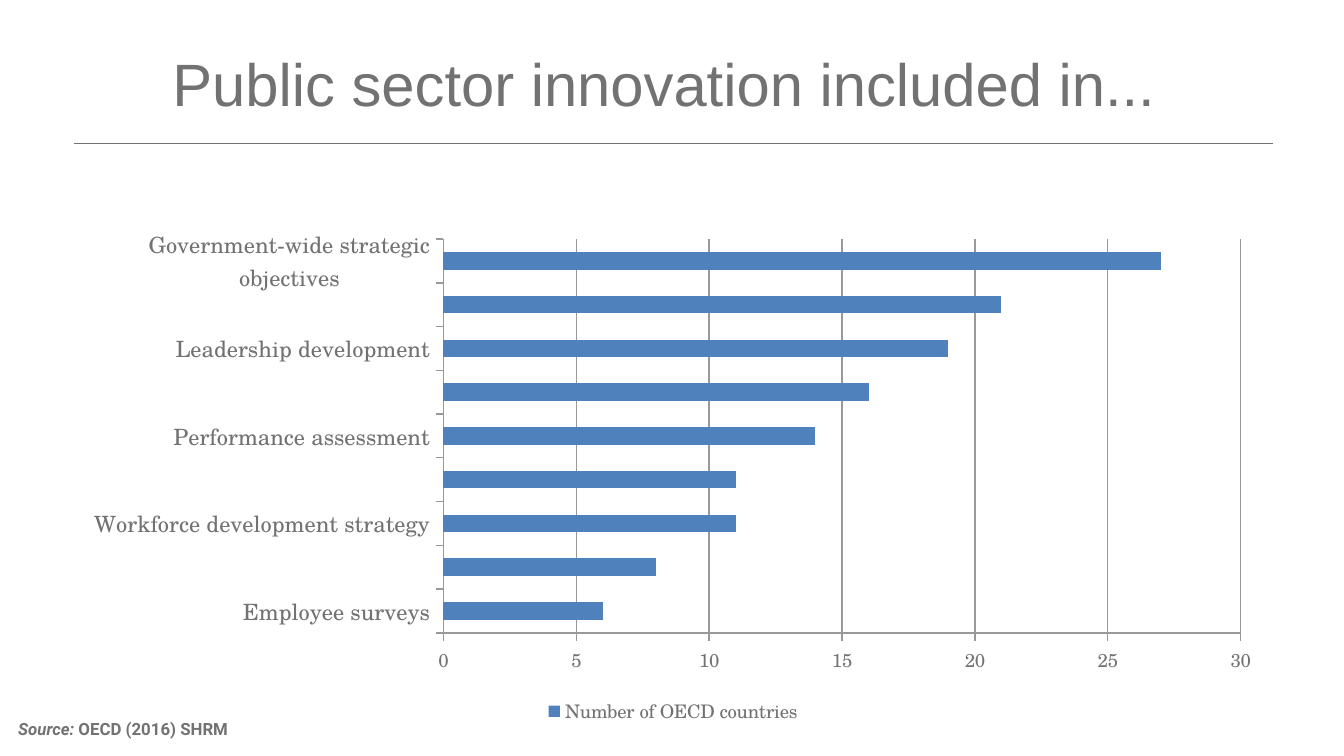
from lxml import etree
from pptx import Presentation
from pptx.chart.data import CategoryChartData
from pptx.dml.color import RGBColor
from pptx.enum.chart import XL_CHART_TYPE as CHART, XL_LEGEND_POSITION as LEGEND, XL_TICK_MARK as TICK
from pptx.enum.shapes import MSO_CONNECTOR as CONNECTOR
from pptx.enum.text import MSO_ANCHOR as ANCHOR, PP_ALIGN as ALIGN
from pptx.oxml import parse_xml
from pptx.oxml.ns import nsdecls, qn
from pptx.util import Pt

PX = 914400 / 134.4
COLORS = {"text": "727272", "bar": "4F81BD", "grid": "999999"}
COUNTRIES = {
    "Employee surveys": 6,
    "Promotion criteria": 8,
    "Workforce development strategy": 11,
    "Recruitment strategy / guidelines": 11,
    "Performance assessment": 14,
    "Competence framework": 16,
    "Leadership development": 19,
    "Training and development": 21,
    "Government-wide strategic objectives": 27,
}
PLOT = {"x": 0.31, "y": 0.19, "w": 0.66, "h": 0.65}


def px(*lengths):
    return [round(n * PX) for n in lengths]


def rgb(name):
    return RGBColor.from_string(COLORS[name])


def set_font(font, **values):
    font.color.rgb = rgb("text")
    for name, value in values.items():
        setattr(font, name, value)


def add_title(s, text, box):
    sp = s.shapes.title
    sp.left, sp.top, sp.width, sp.height = px(*box)
    tf = sp.text_frame
    tf.vertical_anchor = ANCHOR.MIDDLE
    p = tf.paragraphs[0]
    p.alignment = ALIGN.LEFT
    r = p.add_run()
    r.text = text
    set_font(r.font, name="Arial", size=Pt(32))


def add_rule(s, x1, x2, y):
    line = s.shapes.add_connector(CONNECTOR.STRAIGHT, *px(x1, y, x2, y))
    line.line.color.rgb = rgb("text")
    line.line.width = Pt(0.5)
    etree.SubElement(line._element.spPr, qn("a:effectLst"))


def add_source(s, runs, box):
    tf = s.shapes.add_textbox(*px(*box)).text_frame
    tf.word_wrap = True
    for text, italic in runs:
        r = tf.paragraphs[0].add_run()
        r.text = text
        set_font(r.font, name="Roboto", size=Pt(9), bold=True, italic=italic)


def place_plot(chart, layout):
    """Fix the inner plot area, as fractions of the chart."""
    edges = "".join(f'<c:{k}Mode val="edge"/>' for k in "xy")
    sizes = "".join(f'<c:{k} val="{v}"/>' for k, v in layout.items())
    area = chart._chartSpace.chart.plotArea
    for old in area.findall(qn("c:layout")):
        area.remove(old)
    area.insert(0, parse_xml(
        f'<c:layout {nsdecls("c")}><c:manualLayout><c:layoutTarget val="inner"/>'
        f"{edges}{sizes}</c:manualLayout></c:layout>"))


def format_axis(axis, size, grid):
    axis.has_major_gridlines = grid
    axis.major_tick_mark = TICK.OUTSIDE
    axis.minor_tick_mark = TICK.NONE
    lines = [axis.format.line]
    if grid:
        lines.append(axis.major_gridlines.format.line)
    for line in lines:
        line.color.rgb = rgb("grid")
        line.width = Pt(0.75)
    set_font(axis.tick_labels.font, name="TeX Gyre Schola", size=Pt(size))


def add_bar_chart(s, name, values, box):
    data = CategoryChartData()
    data.categories = list(values)
    data.add_series(name, list(values.values()))
    chart = s.shapes.add_chart(CHART.BAR_CLUSTERED, *px(*box), data).chart
    set_font(chart.font, name="TeX Gyre Schola", size=Pt(10))
    chart.has_title = False
    chart.has_legend = True
    chart.legend.position = LEGEND.BOTTOM
    chart.legend.include_in_layout = False
    plot = chart.plots[0]
    plot.gap_width = 150
    plot.vary_by_categories = False
    fill = plot.series[0].format.fill
    fill.solid()
    fill.fore_color.rgb = rgb("bar")
    format_axis(chart.category_axis, 12, False)
    format_axis(chart.value_axis, 10, True)
    scale = {"minimum_scale": 0, "maximum_scale": 30, "major_unit": 5}
    for key, value in scale.items():
        setattr(chart.value_axis, key, value)
    place_plot(chart, PLOT)


def main():
    prs = Presentation()
    prs.slide_width, prs.slide_height = px(1344, 756)
    s = prs.slides.add_slide(prs.slide_layouts[5])
    add_rule(s, 74, 1273, 144)
    add_title(s, "Public sector innovation included in...", (159, 26, 1090, 113))
    add_source(s, [("Source:", True), (" OECD (2016) SHRM", False)], (5, 712, 1122, 34))
    add_bar_chart(s, "Number of OECD countries", COUNTRIES, (69, 124, 1208, 606))
    prs.save("out.pptx")


if __name__ == "__main__":
    main()
